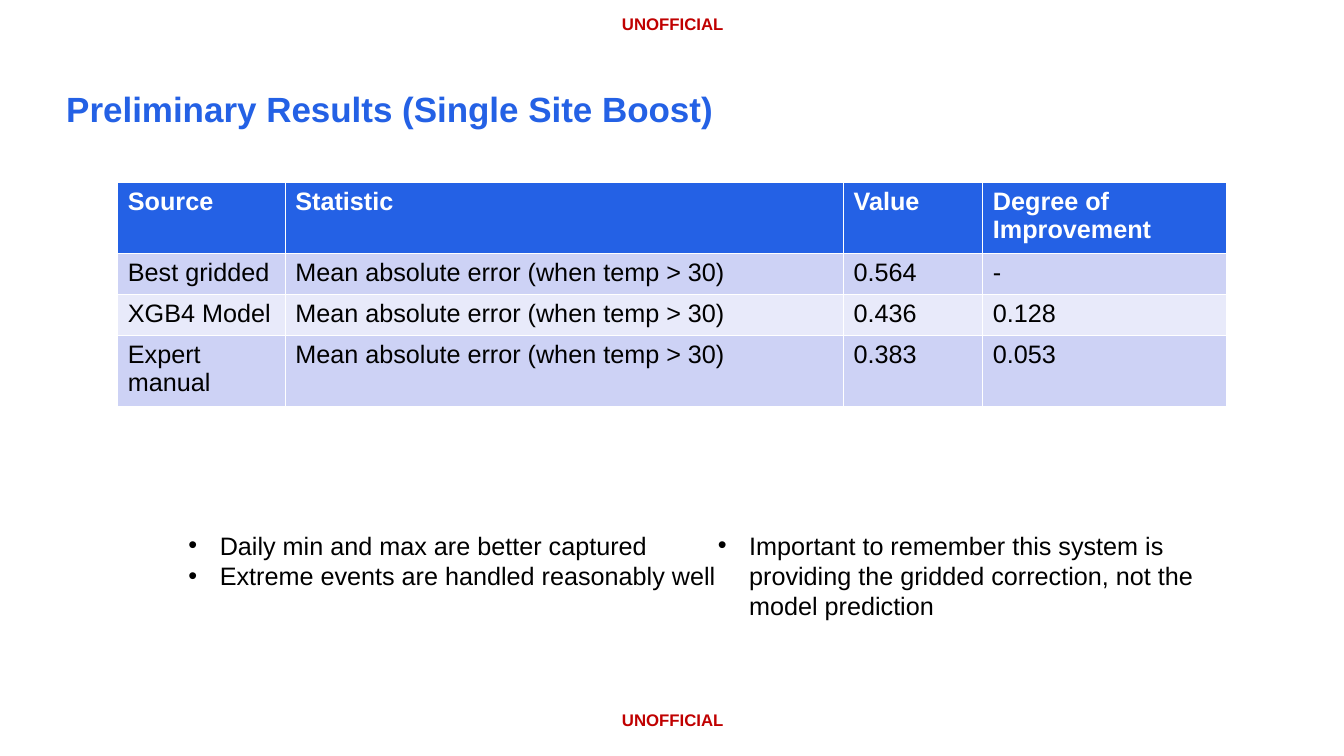
from pptx import Presentation
from pptx.dml.color import RGBColor
from pptx.enum.text import PP_ALIGN
from pptx.oxml.ns import qn
from pptx.util import Cm, Pt
from lxml.etree import SubElement

BLUE = RGBColor(0x24, 0x61, 0xE5)
RED = RGBColor(0xC0, 0x00, 0x00)
BLACK = RGBColor(0x00, 0x00, 0x00)
WHITE = RGBColor(0xFF, 0xFF, 0xFF)
DARK = RGBColor(0xCD, 0xD2, 0xF5)
PALE = RGBColor(0xE8, 0xEA, 0xFA)


def style(para, size, color, bold=False):
    font = para.font
    font.name = "Arial"
    font.size = Pt(size)
    font.bold = bold
    font.color.rgb = color


def add_text(left, top, width, height):
    """Add a wrapping text box, measured in centimetres, and return its frame."""
    box = slide.shapes.add_textbox(Cm(left), Cm(top), Cm(width), Cm(height))
    box.text_frame.word_wrap = True
    return box.text_frame


deck = Presentation()
deck.slide_width = Cm(33.87)
deck.slide_height = Cm(19.05)
slide = deck.slides.add_slide(deck.slide_layouts[6])

# Markings at the top and bottom
for top in (0.23, 17.75):
    para = add_text(0.23, top, 33.45, 1.12).paragraphs[0]
    para.text = "UNOFFICIAL"
    para.alignment = PP_ALIGN.CENTER
    style(para, 12, RED, True)

# Title
title = add_text(1.42, 2.21, 24.74, 1.3).paragraphs[0]
title.text = "Preliminary Results (Single Site Boost)"
title.line_spacing = 0.9
style(title, 25, BLUE, True)

# Results
ERROR = "Mean absolute error (when temp > 30)"
rows = [
    ("Source", "Statistic", "Value", "Degree of Improvement"),
    ("Best gridded", ERROR, "0.564", "-"),
    ("XGB4 Model", ERROR, "0.436", "0.128"),
    ("Expert manual", ERROR, "0.383", "0.053"),
]
widths = (4.22, 14.07, 3.51, 6.15)
table = slide.shapes.add_table(
    len(rows), len(widths), Cm(2.97), Cm(4.6), Cm(sum(widths)), Cm(4.16)
).table
for col, width in zip(table.columns, widths):
    col.width = Cm(width)
for r, row in enumerate(rows):
    head = r == 0
    for c, text in enumerate(row):
        cell = table.cell(r, c)
        cell.text = text
        cell.fill.solid()
        cell.fill.fore_color.rgb = BLUE if head else DARK if r % 2 else PALE
        style(cell.text_frame.paragraphs[0], 18, WHITE if head else BLACK, head)

# Findings in two columns
notes = [
    ("Daily min and max are better captured",
     "Extreme events are handled reasonably well"),
    ("Important to remember this system is providing the gridded correction, "
     "not the model prediction",),
]
for n, points in enumerate(notes):
    frame = add_text(4.5 + n * 13.34, 13.23, 13.84, 3.33)
    frame.text = "\n".join(points)
    for para in frame.paragraphs:
        props = para._p.get_or_add_pPr()
        props.set("marL", str(Cm(0.79)))
        props.set("indent", str(-Cm(0.79)))
        SubElement(props, qn("a:buFont")).set("typeface", "Arial")
        SubElement(props, qn("a:buChar")).set("char", "•")
        style(para, 18, BLACK)

deck.save("out.pptx")
